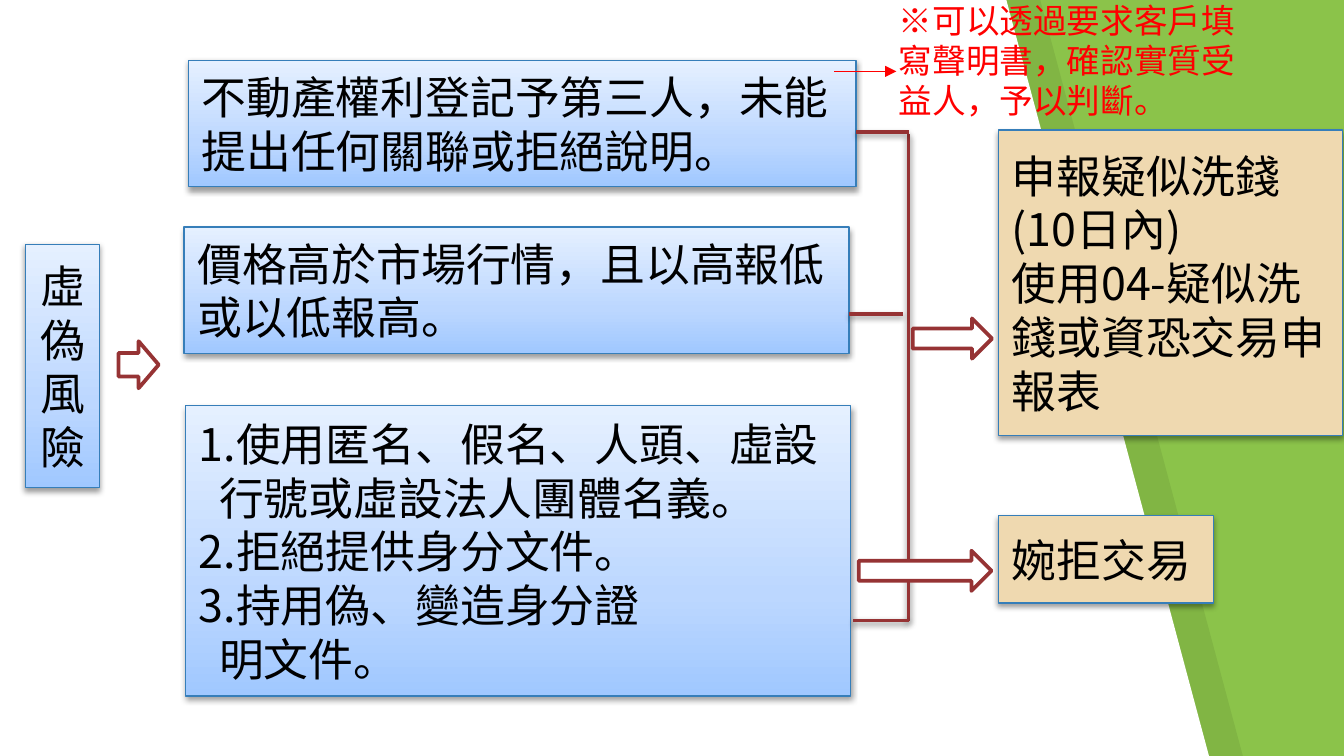
from lxml.etree import SubElement
from copy import deepcopy

from pptx import Presentation
from pptx.dml.color import RGBColor
from pptx.enum.shapes import MSO_CONNECTOR as Connector, MSO_SHAPE as Preset
from pptx.enum.text import MSO_ANCHOR as Anchor, MSO_AUTO_SIZE as AutoSize, PP_ALIGN as Align
from pptx.oxml.ns import qn
from pptx.util import Cm, Pt

COLORS = {
    "green": "8BC34A", "white": "FFFFFF", "black": "000000", "red": "FF0000",
    "maroon": "963334", "border": "367EB9", "tan": "EFD9B0",
    "deep": "A0C8FF", "middle": "BCD7FF", "pale": "E5F0FF",
}
GRADIENT = [(0, "deep"), (0.35, "middle"), (1, "pale")]


def rgb(name):
    return RGBColor.from_string(COLORS[name])


def write_text(frame, lines, *, size=24, color="black", font="Noto Sans CJK SC",
               align=Align.LEFT, hanging=(), indent=0.38):
    frame.word_wrap = True
    for index, line in enumerate(lines):
        paragraph = frame.paragraphs[0] if index == 0 else frame.add_paragraph()
        paragraph.alignment = align
        if index in hanging:
            paragraph._p.get_or_add_pPr().set("marL", str(Cm(indent)))
        run = paragraph.add_run()
        run.text = line
        run.font.size = Pt(size)
        run.font.name = font
        run.font.color.rgb = rgb(color)
        SubElement(run._r.get_or_add_rPr(), qn("a:ea"), typeface=font)


class SlideBuilder:
    """Hold the style and the current slide, and draw each kind of element."""

    def __init__(self, slide, line_color="maroon", line_width=2):
        self.slide = slide
        self.line_color = line_color
        self.line_width = line_width

    def background(self, color):
        fill = self.slide.background.fill
        fill.solid()
        fill.fore_color.rgb = rgb(color)

    def add_shadow(self, effects):
        shadow = SubElement(effects, qn("a:outerShdw"), blurRad=str(Pt(3.1)), dist=str(Pt(1.6)),
                            dir="5400000", rotWithShape="0")
        shadow_color = SubElement(shadow, qn("a:srgbClr"), val=COLORS["black"])
        SubElement(shadow_color, qn("a:alpha"), val="38000")

    def paint(self, shape, color, line, width):
        shape.fill.solid()
        shape.fill.fore_color.rgb = rgb(color)
        shape.line.color.rgb = rgb(line)
        shape.line.width = Pt(width)
        shape.shadow.inherit = False

    def paint_gradient(self, shape):
        fill = shape.fill
        fill.gradient()
        fill.gradient_angle = 90
        stop_list = shape._element.spPr.find(".//" + qn("a:gsLst"))
        stop_list.append(deepcopy(stop_list[0]))
        for stop, (position, color) in zip(fill.gradient_stops, GRADIENT):
            stop.position = position
            stop.color.rgb = rgb(color)

    def panel(self, points, color, opacity=100):
        points = [(Cm(x), Cm(y)) for x, y in points]
        builder = self.slide.shapes.build_freeform(*points[0])
        builder.add_line_segments(points[1:], close=True)
        shape = builder.convert_to_shape()
        self.paint(shape, color, color, 0)
        shape.line.fill.background()
        if opacity < 100:
            fill_color = shape._element.spPr.find(qn("a:solidFill"))[0]
            SubElement(fill_color, qn("a:alpha"), val=str(opacity * 1000))

    def box(self, bounds, lines, color=None, **text_format):
        shape = self.slide.shapes.add_shape(Preset.RECTANGLE, *map(Cm, bounds))
        self.paint(shape, color or "pale", "border", 0.75)
        if color is None:
            self.paint_gradient(shape)
        self.add_shadow(shape._element.spPr.find(qn("a:effectLst")))
        shape.text_frame.vertical_anchor = Anchor.MIDDLE
        write_text(shape.text_frame, lines, **text_format)

    def block_arrow(self, bounds):
        shape = self.slide.shapes.add_shape(Preset.RIGHT_ARROW, *map(Cm, bounds))
        self.paint(shape, "white", self.line_color, self.line_width)

    def line(self, ends, color=None, width=None, arrow=False):
        connector = self.slide.shapes.add_connector(Connector.STRAIGHT, *map(Cm, ends))
        connector.line.color.rgb = rgb(color or self.line_color)
        connector.line.width = Pt(width or self.line_width)
        effects = SubElement(connector._element.spPr, qn("a:effectLst"))
        if arrow:
            SubElement(connector.line._get_or_add_ln(), qn("a:tailEnd"), type="triangle")
        else:
            self.add_shadow(effects)

    def note(self, bounds, lines, **text_format):
        frame = self.slide.shapes.add_textbox(*map(Cm, bounds)).text_frame
        write_text(frame, lines, **text_format)
        frame.auto_size = AutoSize.SHAPE_TO_FIT_TEXT


def main():
    presentation = Presentation()
    presentation.slide_width, presentation.slide_height = Cm(25.4), Cm(14.29)
    builder = SlideBuilder(presentation.slides.add_slide(presentation.slide_layouts[6]))

    builder.background("green")
    for left, color, opacity in [(0.64, "black", 7), (0, "white", 100)]:
        outline = [(0, -0.03), (0, 14.33), (22.86, 14.33), (19.02, 0)]
        builder.panel([(x + left, y) for x, y in outline], color, opacity)

    builder.box((0.48, 4.62, 1.4, 4.6), ["虛偽風險"], align=Align.CENTER)
    builder.box((3.56, 1.14, 12.62, 2.39), ["不動產權利登記予第三人，未能提出任何關聯或拒絕說明。"])
    builder.block_arrow((2.24, 6.45, 0.76, 0.89))
    builder.box((3.48, 4.29, 12.57, 2.39), ["價格高於市場行情，且以高報低或以低報高。"])
    builder.box((3.51, 7.67, 12.57, 5.49),
                ["1.使用匿名、假名、人頭、虛設", "行號或虛設法人團體名義。", "2.拒絕提供身分文件。",
                 "3.持用偽、變造身分證", "明文件。"], hanging=(1, 4))

    trunk, bottom = 17.17, 11.73
    builder.line((trunk, 2.54, trunk, bottom))
    for start, end, y in [(16.18, trunk, 2.49), (16.05, 17.07, 5.94), (16.13, trunk, bottom)]:
        builder.line((start, y, end, y))

    builder.box((18.87, 9.75, 4.06, 1.65), ["婉拒交易"], "tan")
    builder.block_arrow((17.25, 6.02, 1.5, 0.76))
    builder.block_arrow((16.23, 10.41, 2.51, 0.76))
    builder.box((18.87, 2.46, 6.5, 5.77),
                ["申報疑似洗錢(10日內)", "使用04-疑似洗錢或資恐交易申報表"], "tan")
    builder.note((16.74, -0.13, 6.96, 2.57),
                 ["※可以透過要求客戶填寫聲明書，確認實質受益人，予以判斷。"], size=18, color="red")
    builder.line((15.77, 1.35, 16.94, 1.35), "red", 0.75, arrow=True)

    presentation.save("out.pptx")


if __name__ == "__main__":
    main()
